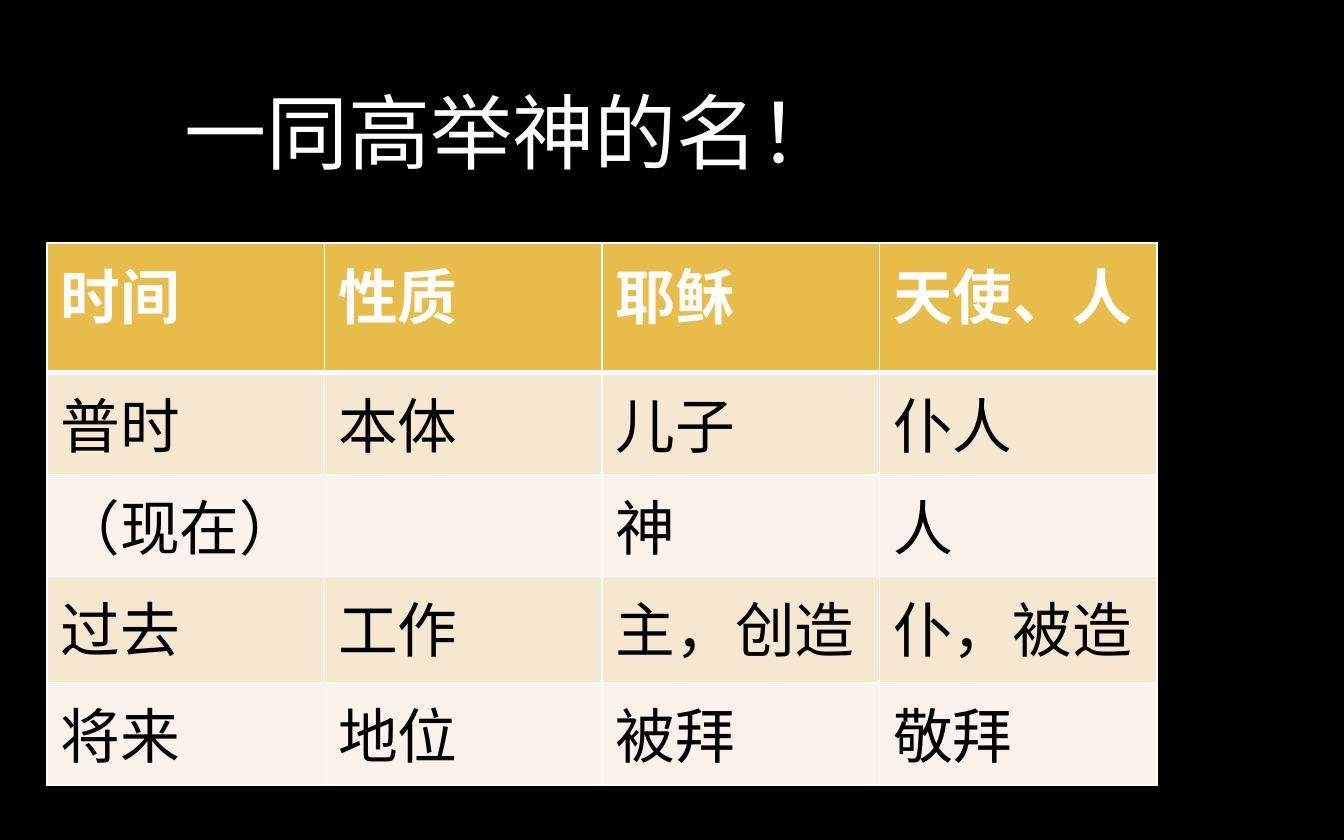
from dataclasses import dataclass

from lxml import etree
from pptx import Presentation
from pptx import util as u
from pptx.dml.color import RGBColor
from pptx.enum import text
from pptx.oxml.ns import qn

WIDTH, HEIGHT = 10, 6.25
WHITE, BLACK = "FFFFFF", "000000"
TITLE_FONT, TABLE_FONT = "Noto Sans CJK SC", "Calibri"
COLUMN_WIDTH = 2.065
ROW_HEIGHTS = [0.96, 0.76, 0.76, 0.79, 0.76]
ROWS = [
    ["时间", "性质", "耶稣", "天使、人"],
    ["普时", "本体", "儿子", "仆人"],
    ["（现在）", "", "神", "人"],
    ["过去", "工作", "主，创造", "仆，被造"],
    ["将来", "地位", "被拜", "敬拜"],
]


@dataclass(frozen=True)
class RowStyle:
    fill: str
    ink: str = BLACK
    bold: bool = False
    bottom_line: float = 1


HEADER = RowStyle("E8BC4A", WHITE, True, 3)
BANDS = [RowStyle("F6E7D0"), RowStyle("FBF3E9")]


def rgb(value: str) -> RGBColor:
    return RGBColor.from_string(value)


def format_runs(paragraph, size: float, font: str, ink: str, bold: bool = False) -> None:
    for run in paragraph.runs:
        run.font.size = u.Pt(size)
        run.font.name = font
        run.font.bold = bold
        run.font.color.rgb = rgb(ink)


def add_borders(cell, widths: dict[str, float]) -> None:
    """Draw white cell edges; they must precede the fill in the cell's properties."""
    properties = cell._tc.get_or_add_tcPr()
    for index, (side, width) in enumerate(widths.items()):
        line = etree.Element(qn(f"a:ln{side}"), w=str(u.Pt(width)))
        fill = etree.SubElement(line, qn("a:solidFill"))
        etree.SubElement(fill, qn("a:srgbClr"), val=WHITE)
        properties.insert(index, line)


def fill_cell(cell, words: str, style: RowStyle, top_line: float) -> None:
    cell.text_frame.text = words
    format_runs(cell.text_frame.paragraphs[0], 32, TABLE_FONT, style.ink, style.bold)
    cell.fill.solid()
    cell.fill.fore_color.rgb = rgb(style.fill)
    add_borders(cell, {"L": 1, "R": 1, "T": top_line, "B": style.bottom_line})


def add_title(slide, words: str) -> None:
    title = slide.shapes.title
    title.left, title.top = u.Inches(1.27), u.Inches(0.55)
    title.width, title.height = u.Inches(6.88), u.Inches(0.84)
    frame = title.text_frame
    frame.text = words
    frame.word_wrap = True
    frame.auto_size = text.MSO_AUTO_SIZE.NONE
    frame.vertical_anchor = text.MSO_ANCHOR.MIDDLE
    frame.paragraphs[0].alignment = text.PP_ALIGN.LEFT
    format_runs(frame.paragraphs[0], 44, TITLE_FONT, WHITE)


def add_comparison(slide) -> None:
    columns = len(ROWS[0])
    table = slide.shapes.add_table(
        len(ROWS), columns, u.Inches(0.35), u.Inches(1.81),
        u.Inches(columns * COLUMN_WIDTH), u.Inches(sum(ROW_HEIGHTS)),
    ).table
    for column in table.columns:
        column.width = u.Inches(COLUMN_WIDTH)
    top_line = 1
    for r, (words, height) in enumerate(zip(ROWS, ROW_HEIGHTS)):
        style = BANDS[(r - 1) % 2] if r else HEADER
        table.rows[r].height = u.Inches(height)
        for c, word in enumerate(words):
            fill_cell(table.cell(r, c), word, style, top_line)
        top_line = style.bottom_line


def main() -> None:
    deck = Presentation()
    deck.slide_width, deck.slide_height = u.Inches(WIDTH), u.Inches(HEIGHT)
    slide = deck.slides.add_slide(deck.slide_layouts.get_by_name("Title Only"))
    slide.background.fill.solid()
    slide.background.fill.fore_color.rgb = rgb(BLACK)
    add_title(slide, "一同高举神的名！")
    add_comparison(slide)
    deck.save("out.pptx")


if __name__ == "__main__":
    main()
